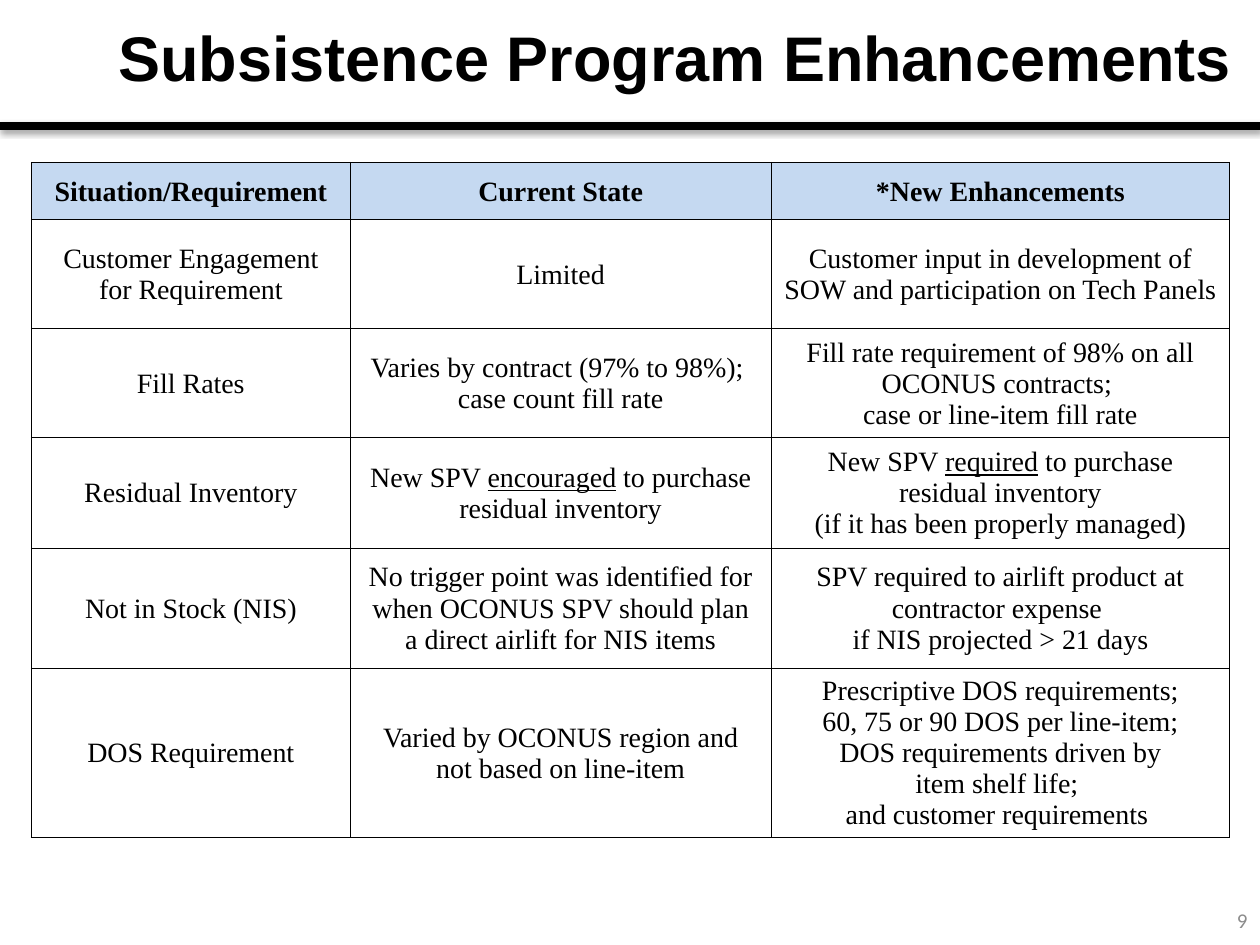
from dataclasses import dataclass

from lxml import etree
from pptx import Presentation
from pptx import util as u
from pptx.dml.color import RGBColor
from pptx.enum import shapes, text
from pptx.oxml import parse_xml
from pptx.oxml.ns import nsdecls, qn


@dataclass(frozen=True)
class Theme:
    ink: str = "000000"
    header: str = "C5D9F1"
    muted: str = "8C8C8C"
    title_font: str = "Arial"
    table_font: str = "Times New Roman"
    number_font: str = "Calibri"
    title_size: int = 36
    table_size: int = 16
    number_size: int = 12
    rule_width: int = 5
    outer_border: float = 1
    inner_border: float = 0.5


THEME = Theme()
WIDTH, HEIGHT = u.Inches(10), u.Inches(7.5)
COLUMNS = [0.253, 0.334, 0.364]
ROWS = [0.06, 0.116, 0.115, 0.117, 0.127, 0.171]
UNDERLINE = "_"

COMPARISON = [
    ["Situation/Requirement", "Current State", "*New Enhancements"],
    ["Customer Engagement for Requirement",
     "Limited",
     "Customer input in development of SOW and participation on Tech Panels"],
    ["Fill Rates",
     "Varies by contract (97% to 98%); \ncase count fill rate",
     "Fill rate requirement of 98% on all OCONUS contracts; \n"
     "case or line-item fill rate"],
    ["Residual Inventory",
     "New SPV _encouraged_ to purchase residual inventory",
     "New SPV _required_ to purchase residual inventory\n"
     "(if it has been properly managed)"],
    ["Not in Stock (NIS)",
     "No trigger point was identified for when OCONUS SPV should plan "
     "a direct airlift for NIS items",
     "SPV required to airlift product at contractor expense \n"
     "if NIS projected > 21 days"],
    ["DOS Requirement",
     "Varied by OCONUS region and not based on line-item",
     "Prescriptive DOS requirements;\n60, 75 or 90 DOS per line-item;\n"
     "DOS requirements driven by\nitem shelf life; \n"
     "and customer requirements "],
]


def share(left, top, width, height):
    return (round(left * WIDTH), round(top * HEIGHT),
            round(width * WIDTH), round(height * HEIGHT))


def place(shape, box):
    shape.left, shape.top, shape.width, shape.height = box


def write(frame, content, *, font, size, color=THEME.ink, bold=False,
          align=text.PP_ALIGN.LEFT, spacing=1.0):
    frame.word_wrap = True
    for index, line in enumerate(content.split("\n")):
        paragraph = frame.paragraphs[0] if index == 0 else frame.add_paragraph()
        paragraph.alignment = align
        paragraph.line_spacing = spacing
        for part, words in enumerate(line.split(UNDERLINE)):
            run = paragraph.add_run()
            run.text = words
            run.font.name = font
            run.font.size = u.Pt(size)
            run.font.bold = bold
            run.font.underline = part % 2 == 1
            run.font.color.rgb = RGBColor.from_string(color)


def add_title(slide, content):
    title = slide.shapes.title
    place(title, share(0.084, 0, 0.916, 0.129))
    frame = title.text_frame
    frame.auto_size = text.MSO_AUTO_SIZE.NONE
    frame.vertical_anchor = text.MSO_ANCHOR.MIDDLE
    write(frame, content, font=THEME.title_font, size=THEME.title_size,
          bold=True, spacing=0.9)


def add_rule(slide):
    y = u.Inches(1)
    rule = slide.shapes.add_connector(shapes.MSO_CONNECTOR.STRAIGHT, 0, y, WIDTH, y)
    rule.line.color.rgb = RGBColor.from_string(THEME.ink)
    rule.line.width = u.Pt(THEME.rule_width)
    rule._element.spPr.append(parse_xml(
        f'<a:effectLst {nsdecls("a")}><a:outerShdw blurRad="{u.Pt(3.1)}" '
        f'dist="{u.Pt(1.6)}" dir="5400000" rotWithShape="0">'
        f'<a:srgbClr val="{THEME.ink}"><a:alpha val="38000"/></a:srgbClr>'
        '</a:outerShdw></a:effectLst>'))


def set_borders(cell, **widths):
    properties = cell._tc.get_or_add_tcPr()
    for side in "LRTB":
        line = etree.SubElement(properties, qn(f"a:ln{side}"),
                                w=str(u.Pt(widths[side])))
        fill = etree.SubElement(line, qn("a:solidFill"))
        etree.SubElement(fill, qn("a:srgbClr"), val=THEME.ink)


def format_cell(cell, content, row, column):
    outer, inner = THEME.outer_border, THEME.inner_border
    is_header = row == 0
    set_borders(cell,
                L=outer if column == 0 else inner,
                R=outer if column == len(COLUMNS) - 1 else inner,
                T=outer if row < 2 else inner,
                B=outer if is_header else inner)
    if is_header:
        cell.fill.solid()
        cell.fill.fore_color.rgb = RGBColor.from_string(THEME.header)
    else:
        cell.fill.background()
    cell.margin_left = cell.margin_right = u.Inches(0.1)
    cell.margin_top, cell.margin_bottom = u.Inches(0.01), 0
    cell.vertical_anchor = text.MSO_ANCHOR.MIDDLE
    write(cell.text_frame, content, font=THEME.table_font,
          size=THEME.table_size, bold=is_header, align=text.PP_ALIGN.CENTER)


def add_comparison(slide):
    box = share(0.025, 0.172, sum(COLUMNS), sum(ROWS))
    table = slide.shapes.add_table(len(ROWS), len(COLUMNS), *box).table
    table.first_row = table.horz_banding = False
    for column, width in zip(table.columns, COLUMNS):
        column.width = round(width * WIDTH)
    for row, height in zip(table.rows, ROWS):
        row.height = round(height * HEIGHT)
    for row, entries in enumerate(COMPARISON):
        for column, entry in enumerate(entries):
            format_cell(table.cell(row, column), entry, row, column)


def add_page_number(slide, number):
    frame = slide.shapes.add_textbox(*share(0.767, 0.947, 0.233, 0.053)).text_frame
    frame.vertical_anchor = text.MSO_ANCHOR.MIDDLE
    write(frame, number, font=THEME.number_font, size=THEME.number_size,
          color=THEME.muted, align=text.PP_ALIGN.RIGHT)


def main():
    deck = Presentation()
    deck.slide_width, deck.slide_height = WIDTH, HEIGHT
    slide = deck.slides.add_slide(deck.slide_layouts.get_by_name("Title Only"))
    add_page_number(slide, "9")
    add_rule(slide)
    add_title(slide, "Subsistence Program Enhancements")
    add_comparison(slide)
    deck.save("out.pptx")


if __name__ == "__main__":
    main()
